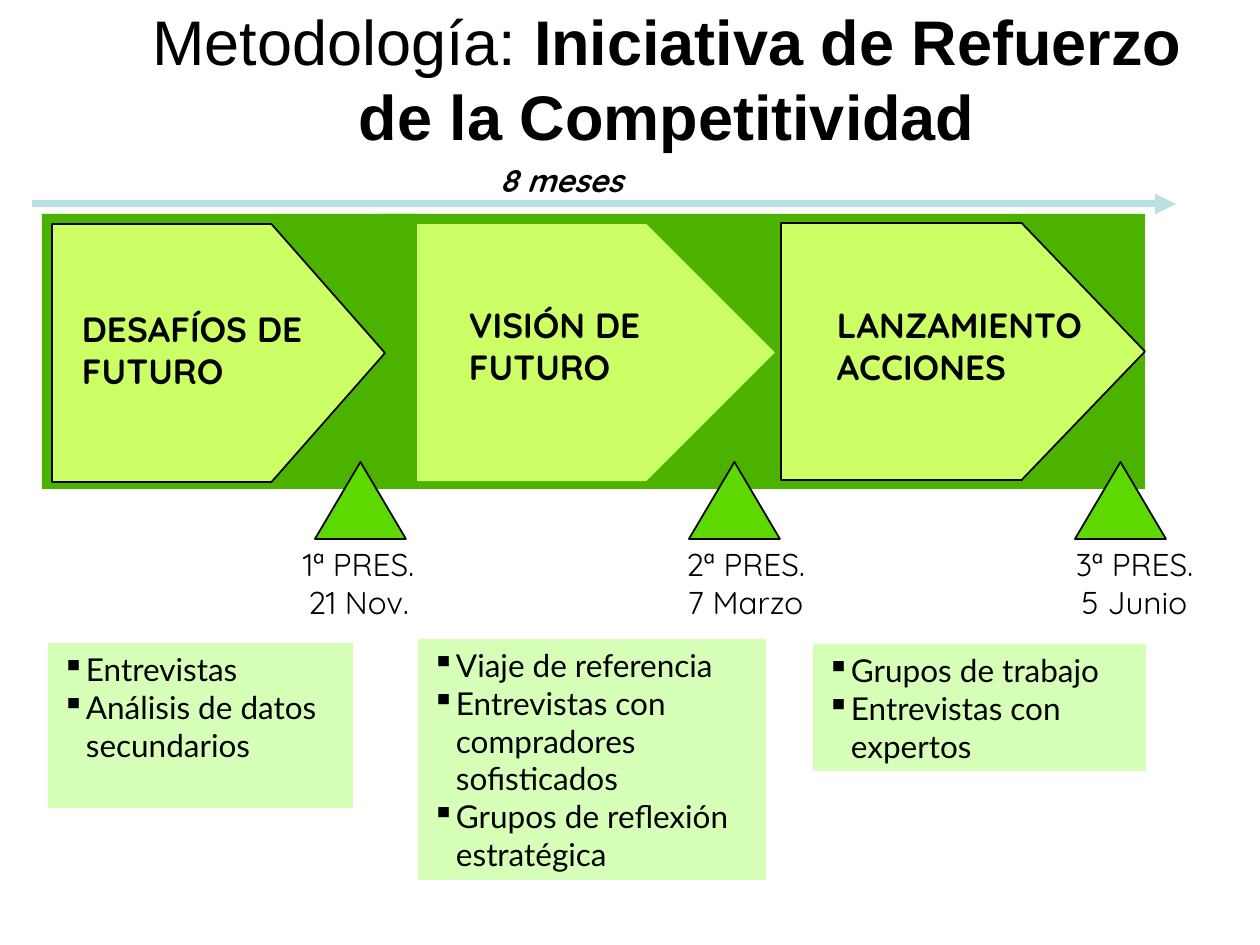
"""Build the methodology timeline slide."""
from lxml.etree import SubElement
from pptx import Presentation
from pptx.dml.color import RGBColor
from pptx.enum.shapes import MSO_CONNECTOR, MSO_SHAPE
from pptx.enum.text import MSO_ANCHOR, MSO_AUTO_SIZE, PP_ALIGN
from pptx.oxml.ns import qn
from pptx.util import Pt

PX = 914400 / 126
BLACK, BAND, ARROW, MILESTONE = "000000", "4CB200", "CCFF66", "5DD800"
NOTE, TIMELINE = "AFFF73", "BBE0E3"

TITLE = [[("Metodología: ", False), ("Iniciativa de Refuerzo de la Competitividad", True)]]
DURATION = "8 meses"
PHASES = [
    dict(name=["DESAFÍOS DE FUTURO"], name_at=(69, 301),
         band=(42, 214, 375, 275), arrow=(52, 224, 333, 258), point=0.44, outline=BLACK,
         milestone=["1ª PRES.", "21 Nov."], milestone_x=315, date_x=233,
         notes=["Entrevistas", "Análisis de datos secundarios"], notes_at=(48, 643, 305, 165)),
    dict(name=["VISIÓN DE", "FUTURO"], name_at=(456, 297),
         band=None, arrow=(396, 224, 379, 257), point=0.5, outline=None,
         milestone=["2ª PRES.", "7 Marzo"], milestone_x=689, date_x=620,
         notes=["Viaje de referencia", "Entrevistas con compradores sofisticados",
                "Grupos de reflexión estratégica"], notes_at=(418, 639, 348, 241)),
    dict(name=["LANZAMIENTO ACCIONES"], name_at=(824, 297),
         band=(378, 214, 767, 275), arrow=(781, 223, 364, 257), point=0.48, outline=BLACK,
         milestone=["3ª PRES.", "5 Junio"], milestone_x=1075, date_x=1009,
         notes=["Grupos de trabajo", "Entrevistas con expertos"], notes_at=(813, 644, 333, 127)),
]


def px(*lengths):
    return [round(length * PX) for length in lengths]


def color(value):
    return RGBColor.from_string(value)


def add_shape(preset, box, fill, outline=None, point=None, alpha=None):
    shape = slide.shapes.add_shape(preset, *px(*box))
    shape.shadow.inherit = False
    shape.fill.solid()
    shape.fill.fore_color.rgb = color(fill)
    if alpha:
        tint = shape.fill._xPr.find(qn("a:solidFill"))[0]
        SubElement(tint, qn("a:alpha"), val=str(alpha * 1000))
    if outline:
        shape.line.color.rgb = color(outline)
        shape.line.width = Pt(1)
    else:
        shape.line.fill.background()
    if point is not None:
        shape.adjustments[0] = point
    return shape


def add_bullet(paragraph):
    properties = paragraph._p.get_or_add_pPr()
    indent, = px(24)
    properties.set("marL", str(indent))
    properties.set("indent", str(-indent))
    SubElement(properties, qn("a:buChar"), char="▪")


def write(paragraphs, box=None, shape=None, font="Quicksand", size=18, bold=False, italic=False,
          align=PP_ALIGN.LEFT, anchor=MSO_ANCHOR.TOP, inset=(14, 7), bullet=False, grow=True):
    shape = shape or slide.shapes.add_textbox(*px(*box))
    frame = shape.text_frame
    frame.word_wrap = True
    frame.auto_size = MSO_AUTO_SIZE.SHAPE_TO_FIT_TEXT if grow else MSO_AUTO_SIZE.NONE
    frame.vertical_anchor = anchor
    frame.margin_left, frame.margin_top = frame.margin_right, frame.margin_bottom = px(*inset)
    for index, runs in enumerate(paragraphs):
        paragraph = frame.add_paragraph() if index else frame.paragraphs[0]
        paragraph.alignment = align
        if bullet:
            add_bullet(paragraph)
        for words, heavy in [(runs, bold)] if isinstance(runs, str) else runs:
            run = paragraph.add_run()
            run.text = words
            run.font.name, run.font.size = font, Pt(size)
            run.font.bold, run.font.italic = heavy, italic
            run.font.color.rgb = color(BLACK)


def add_timeline(start, end, y):
    timeline = slide.shapes.add_connector(MSO_CONNECTOR.STRAIGHT, *px(start, y, end, y))
    timeline.line.color.rgb = color(TIMELINE)
    timeline.line.width = Pt(4)
    SubElement(timeline.line._get_or_add_ln(), qn("a:tailEnd"), type="triangle")
    SubElement(timeline._element.spPr, qn("a:effectLst"))


deck = Presentation()
deck.slide_width, deck.slide_height = px(1260, 945)
slide = deck.slides.add_slide(deck.slide_layouts[6])

write(TITLE, (95, 10, 1144, 136), font="Arial", size=36, align=PP_ALIGN.CENTER,
      anchor=MSO_ANCHOR.MIDDLE, grow=False)
write([DURATION], (335, 154, 452, 52), bold=True, italic=True, align=PP_ALIGN.CENTER)
add_timeline(32, 1176, 204)

for phase in reversed(PHASES):
    if phase["band"]:
        add_shape(MSO_SHAPE.RECTANGLE, phase["band"], BAND)
    add_shape(MSO_SHAPE.PENTAGON, phase["arrow"], ARROW, phase["outline"], phase["point"])

for phase in PHASES:
    add_shape(MSO_SHAPE.ISOSCELES_TRIANGLE, (phase["milestone_x"], 462, 91, 77), MILESTONE, BLACK)
    write(phase["name"], (*phase["name_at"], 292, 97), size=20, bold=True, inset=(13, 6))
    write(phase["milestone"], (phase["date_x"], 538, 251, 89), align=PP_ALIGN.CENTER)
    notes = add_shape(MSO_SHAPE.RECTANGLE, phase["notes_at"], NOTE, alpha=50)
    write(phase["notes"], shape=notes, font="Lato", bullet=True)

deck.save("out.pptx")
